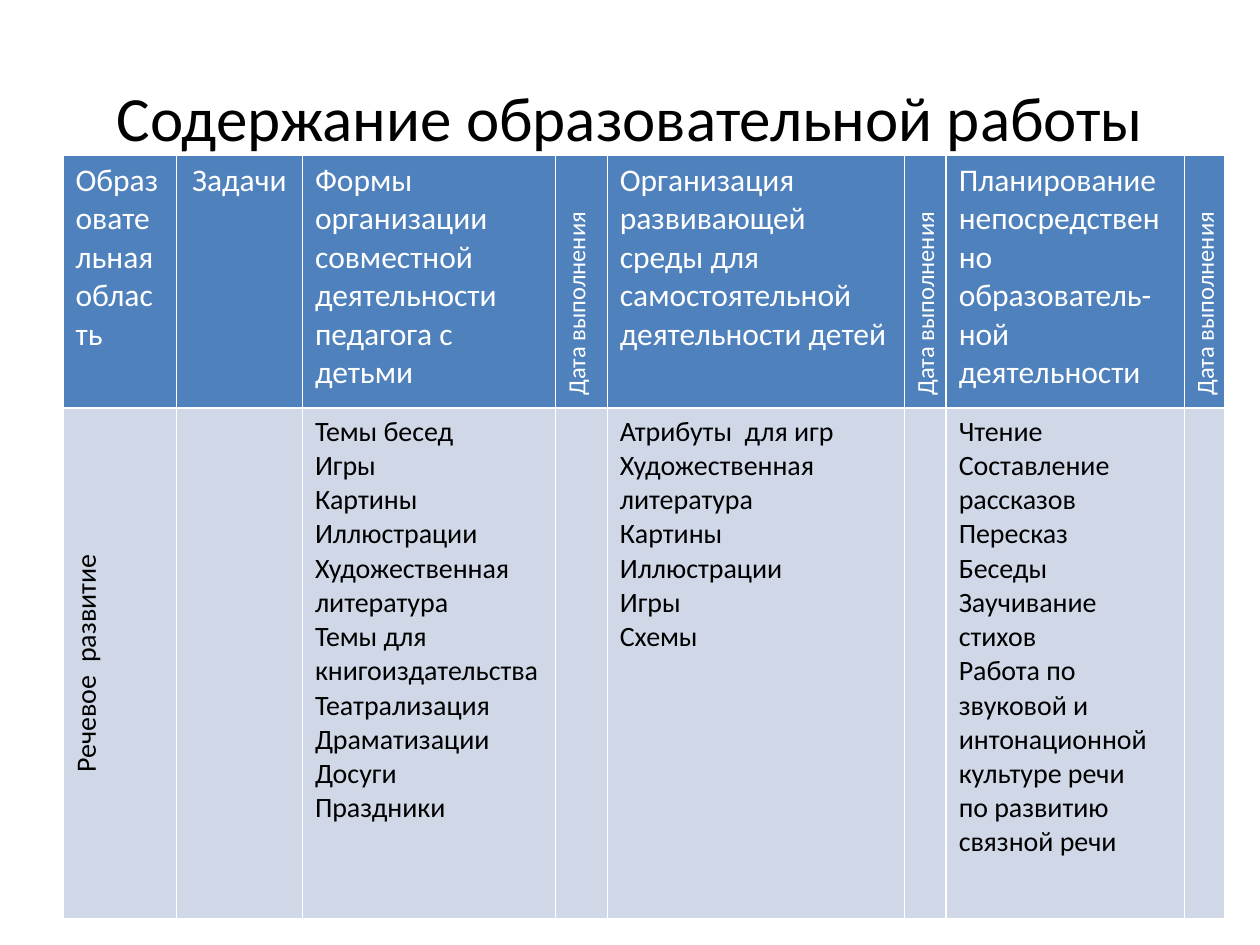
from pptx import Presentation
from pptx.dml.color import RGBColor
from pptx.enum.text import MSO_ANCHOR, PP_ALIGN
from pptx.util import Inches, Pt

BLACK = RGBColor(0x00, 0x00, 0x00)
WHITE = RGBColor(0xFF, 0xFF, 0xFF)
HEADER_BLUE = RGBColor(0x4F, 0x81, 0xBD)
BODY_BLUE = RGBColor(0xD0, 0xD8, 0xE8)

COLUMN_WIDTHS = [0.9, 1, 2.01, 0.41, 2.36, 0.33, 1.89, 0.32]
ROW_HEIGHTS = [2.01, 4.05]
DATE = "Дата выполнения"
AREA = "Речевое  развитие"
TASKS = "Задачи "

HEADERS = [
    "Образовательная область",
    TASKS,
    "Формы организации совместной деятельности педагога с детьми",
    DATE,
    "Организация развивающей среды для самостоятельной деятельности детей",
    DATE,
    "Планирование непосредственно образователь-ной деятельности",
    DATE,
]
FORMS = [
    "Темы бесед",
    "Игры",
    "Картины",
    "Иллюстрации",
    "Художественная литература",
    "Темы для книгоиздательства",
    "Театрализация",
    "Драматизации",
    "Досуги",
    "Праздники",
]
ENVIRONMENT = [
    "Атрибуты  для игр",
    "Художественная литература",
    "Картины",
    "Иллюстрации",
    "Игры",
    "Схемы",
]
ACTIVITIES = [
    "Чтение",
    "Составление рассказов",
    "Пересказ",
    "Беседы",
    "Заучивание стихов",
    "Работа по звуковой и интонационной культуре речи",
    "по развитию связной речи",
]
BODY = [AREA, "", "\n".join(FORMS), "", "\n".join(ENVIRONMENT), "", "\n".join(ACTIVITIES), ""]


def format_text(text_frame, size, color):
    for paragraph in text_frame.paragraphs:
        for run in paragraph.runs:
            run.font.name = "Calibri"
            run.font.size = Pt(size)
            run.font.bold = False
            run.font.color.rgb = color


presentation = Presentation()
presentation.slide_width = Inches(10)
presentation.slide_height = Inches(7.5)
slide = presentation.slides.add_slide(presentation.slide_layouts[6])

title = slide.shapes.add_textbox(Inches(0.5), Inches(0.3), Inches(9), Inches(1.25))
title.text_frame.word_wrap = True
title.text_frame.vertical_anchor = MSO_ANCHOR.MIDDLE
title.text_frame.text = "Содержание образовательной работы"
title.text_frame.paragraphs[0].alignment = PP_ALIGN.CENTER
format_text(title.text_frame, 36, BLACK)

table = slide.shapes.add_table(
    len(ROW_HEIGHTS), len(COLUMN_WIDTHS),
    Inches(0.5), Inches(1.23), Inches(sum(COLUMN_WIDTHS)), Inches(sum(ROW_HEIGHTS)),
).table
for column, width in zip(table.columns, COLUMN_WIDTHS):
    column.width = Inches(width)
for row, height in zip(table.rows, ROW_HEIGHTS):
    row.height = Inches(height)

row_styles = [(HEADERS, HEADER_BLUE, WHITE, 18), (BODY, BODY_BLUE, BLACK, 16)]
for row, (texts, fill, color, size) in zip(table.rows, row_styles):
    for cell, text in zip(row.cells, texts):
        cell.fill.solid()
        cell.fill.fore_color.rgb = fill
        cell.text_frame.text = text
        format_text(cell.text_frame, 14 if text == DATE else size, color)
        if text in (DATE, AREA):
            cell._tc.get_or_add_tcPr().set("vert", "vert270")
        if text in (TASKS, AREA):
            cell.text_frame.paragraphs[0].alignment = PP_ALIGN.CENTER

presentation.save("out.pptx")
